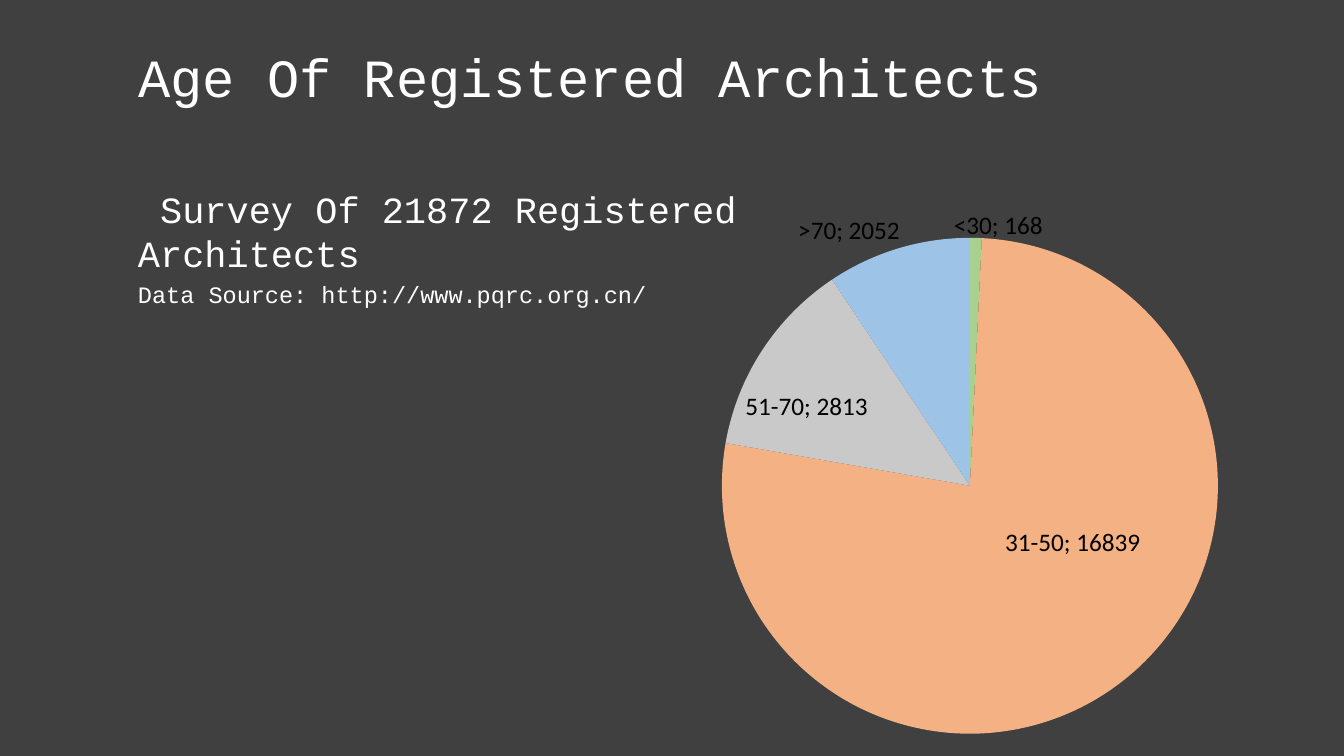
from dataclasses import dataclass

from lxml.etree import SubElement
from pptx import Presentation
from pptx.chart.data import CategoryChartData as ChartData
from pptx.dml.color import RGBColor as Rgb
from pptx.enum.chart import XL_CHART_TYPE as Kind, XL_LABEL_POSITION as Spot
from pptx.enum.text import MSO_ANCHOR as Anchor, MSO_AUTO_SIZE as Fit, PP_ALIGN as Align
from pptx.oxml.ns import qn
from pptx.util import Inches, Pt

HUES = {
    "back": "404040", "text": "FFFFFF", "label": "000000",
    "green": "A9D18E", "orange": "F4B183", "gray": "C9C9C9", "blue": "9DC3E6",
}
# Chart frame and pie circle, in inches
LEFT, TOP, WIDTH, HEIGHT = 5.34, 1.86, 8.41, 5.64
PIE_X, PIE_Y, PIE_SIZE = 7.16, 2.36, 4.92


@dataclass
class Slice:
    ages: str
    count: int
    hue: str
    dx: float  # label shift, as a share of the chart width
    dy: float  # label shift, as a share of the chart height


@dataclass
class Line:
    text: str
    size: float
    before: float = 0


SLICES = [
    Slice("<30", 168, "green", 0.03, -0.24),
    Slice("31-50", 16839, "orange", 0.03, -0.07),
    Slice("51-70", 2813, "gray", -0.07, -0.02),
    Slice(">70", 2052, "blue", -0.1, -0.24),
]
TITLE = [Line("Age Of Registered Architects", 38.4)]
NOTES = [
    Line(" Survey Of 21872 Registered Architects", 26.4),
    Line("Data Source: http://www.pqrc.org.cn/", 16.8, 3.4),
]


def color(name: str) -> Rgb:
    return Rgb.from_string(HUES[name])


def write(frame, lines: list[Line], anchor: Anchor) -> None:
    frame.word_wrap = True
    frame.auto_size = Fit.NONE
    frame.vertical_anchor = anchor
    for i, line in enumerate(lines):
        para = frame.add_paragraph() if i else frame.paragraphs[0]
        para.alignment = Align.LEFT
        if line.before:
            para.space_before = Pt(line.before)
        run = para.add_run()
        run.text = line.text
        run.font.name = "Courier New"
        run.font.size = Pt(line.size)
        run.font.color.rgb = color("text")


def place(layout, **parts) -> None:
    """Fill a c:layout element with manual settings."""
    manual = SubElement(layout, qn("c:manualLayout"))
    for tag, val in parts.items():
        SubElement(manual, qn(f"c:{tag}")).set("val", str(val))


def style(font) -> None:
    font.name = "Calibri"
    font.size = Pt(18)
    font.color.rgb = color("label")


def paint(point, part: Slice) -> None:
    point.format.fill.solid()
    point.format.fill.fore_color.rgb = color(part.hue)
    label = point.data_label
    style(label.font)
    label.position = Spot.CENTER
    node = next(label.font._element.iterancestors(qn("c:dLbl")))
    layout = SubElement(node, qn("c:layout"))
    node.find(qn("c:idx")).addnext(layout)
    place(layout, x=part.dx, y=part.dy)
    node.find(qn("c:showCatName")).set("val", "1")
    node.find(qn("c:showVal")).set("val", "1")
    SubElement(node, qn("c:separator")).text = "; "


def add_pie(slide) -> None:
    data = ChartData()
    data.categories = [part.ages for part in SLICES]
    data.add_series("Series 1", [part.count for part in SLICES])
    chart = slide.shapes.add_chart(
        Kind.PIE, Inches(LEFT), Inches(TOP), Inches(WIDTH), Inches(HEIGHT), data
    ).chart
    chart.has_title = False
    chart.has_legend = False
    style(chart.font)
    plot = chart.plots[0]
    plot.vary_by_categories = True

    # Pie circle inside the chart frame
    area = chart._chartSpace.chart.plotArea
    layout = area.find(qn("c:layout"))
    if layout is None:
        layout = SubElement(area, qn("c:layout"))
        area.insert(0, layout)
    place(layout, layoutTarget="inner", xMode="edge", yMode="edge",
          x=(PIE_X - LEFT) / WIDTH, y=(PIE_Y - TOP) / HEIGHT,
          w=PIE_SIZE / WIDTH, h=PIE_SIZE / HEIGHT)

    # Slices and their labels
    plot.has_data_labels = True
    labels = plot.data_labels
    labels.show_value = labels.show_category_name = True
    labels.show_percentage = False
    for i, part in enumerate(SLICES):
        paint(plot.series[0].points[i], part)


def main() -> None:
    deck = Presentation()
    deck.slide_width, deck.slide_height = Inches(13.33), Inches(7.5)
    slide = deck.slides.add_slide(deck.slide_layouts[5])

    # Dark backdrop
    fill = slide.background.fill
    fill.solid()
    fill.fore_color.rgb = color("back")

    # Survey text
    box = slide.shapes.add_textbox(
        Inches(1.27), Inches(1.8), Inches(6.25), Inches(5.31))
    write(box.text_frame, NOTES, Anchor.TOP)

    # Title
    title = slide.shapes.title
    title.left, title.top = Inches(1.27), Inches(0.3)
    title.width, title.height = Inches(10.8), Inches(0.9)
    write(title.text_frame, TITLE, Anchor.MIDDLE)

    # Age chart
    add_pie(slide)
    deck.save("out.pptx")


if __name__ == "__main__":
    main()
